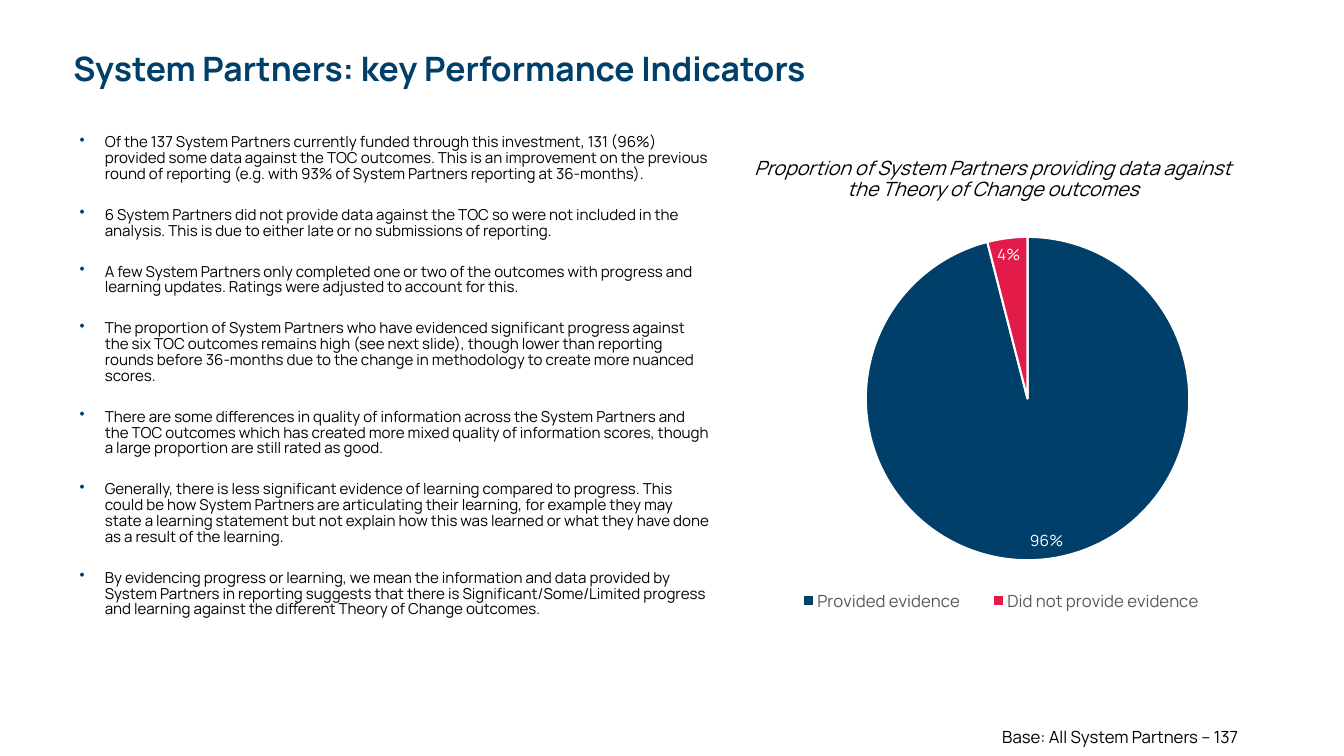
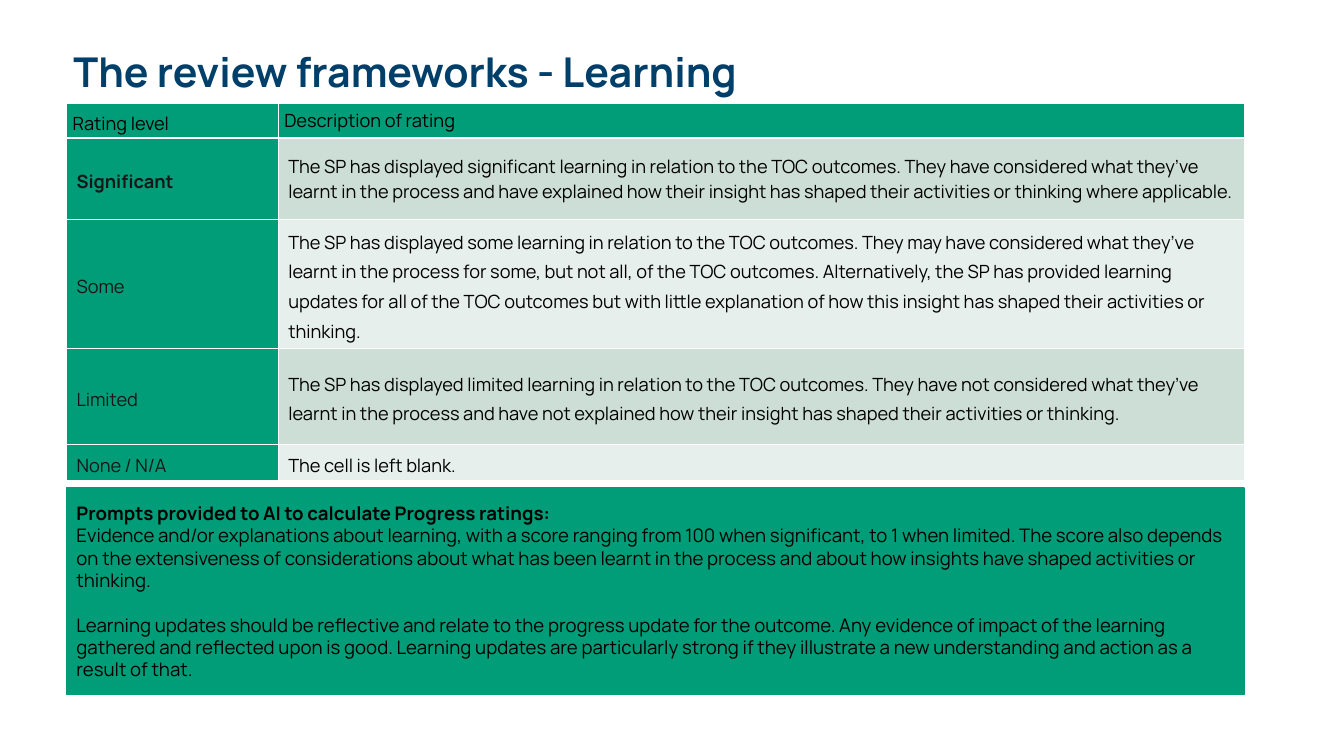
from dataclasses import dataclass, field
from typing import Any

import pptx
import pptx.chart.data
import pptx.dml.color
import pptx.enum.chart
import pptx.enum.shapes
import pptx.enum.text
import pptx.oxml.ns
import pptx.oxml.xmlchemy
import pptx.util

Inches = pptx.util.Inches
Pt = pptx.util.Pt
qn = pptx.oxml.ns.qn
new_element = pptx.oxml.xmlchemy.OxmlElement
Align = pptx.enum.text.PP_ALIGN
Anchor = pptx.enum.text.MSO_ANCHOR


@dataclass(frozen=True)
class TextStyle:
    size: float
    color: str = "000000"
    bold: bool = False
    italic: bool = False


@dataclass(frozen=True)
class Theme:
    font: str = "Manrope"
    navy: str = "003F69"
    red: str = "E31B49"
    green: str = "019C78"
    bands: tuple[str, str] = ("CCDED6", "E7EFEC")
    white: str = "FFFFFF"
    title_sizes: tuple[float, float] = (24, 29.3)
    bullet: TextStyle = TextStyle(10.8)
    chart_title: TextStyle = TextStyle(14, italic=True)
    chart_label: TextStyle = TextStyle(11, "FFFFFF")
    legend: TextStyle = TextStyle(12, "595959")
    footer: TextStyle = TextStyle(12)
    cell: TextStyle = TextStyle(13)
    rating: TextStyle = TextStyle(13, "181717")
    rating_bold: TextStyle = TextStyle(13, "181717", bold=True)
    prompt: TextStyle = TextStyle(13.3)
    prompt_bold: TextStyle = TextStyle(13.3, bold=True)


@dataclass(frozen=True)
class Line:
    """One paragraph with its style and paragraph format values."""
    text: str
    style: TextStyle
    layout: dict[str, Any] = field(default_factory=dict)
    bullet: bool = False


@dataclass(frozen=True)
class Area:
    left: float
    top: float
    width: float
    height: float

    def lengths(self) -> tuple[int, ...]:
        return tuple(Inches(v) for v in (self.left, self.top, self.width, self.height))


@dataclass(frozen=True)
class Rating:
    level: str
    description: str
    height: float
    style: TextStyle
    spacing: float = 1.2


THEME = Theme()
NO_INSETS = dict.fromkeys(("margin_left", "margin_top", "margin_right", "margin_bottom"), 0)

BULLETS = (
    "Of the 137 System Partners currently funded through this investment, 131 (96%) provided some data against the TOC outcomes. This is an improvement on the previous round of reporting (e.g. with 93% of System Partners reporting at 36-months).",
    "6 System Partners did not provide data against the TOC so were not included in the analysis. This is due to either late or no submissions of reporting.",
    "A few System Partners only completed one or two of the outcomes with progress and learning updates. Ratings were adjusted to account for this.",
    "The proportion of System Partners who have evidenced significant progress against the six TOC outcomes remains high (see next slide), though lower than reporting rounds before 36-months due to the change in methodology to create more nuanced scores.",
    "There are some differences in quality of information across the System Partners and the TOC outcomes which has created more mixed quality of information scores, though a large proportion are still rated as good.",
    "Generally, there is less significant evidence of learning compared to progress. This could be how System Partners are articulating their learning, for example they may state a learning statement but not explain how this was learned or what they have done as a result of the learning.",
    "By evidencing progress or learning, we mean the information and data provided by System Partners in reporting suggests that there is Significant/Some/Limited progress and learning against the different Theory of Change outcomes.",
)

RATINGS = (
    Rating("Significant", "The SP has displayed significant learning in relation to the TOC outcomes. They have considered what they’ve learnt in the process and have explained how their insight has shaped their activities or thinking where applicable.", 0.81, THEME.rating_bold, 1.0),
    Rating("Some", "The SP has displayed some learning in relation to the TOC outcomes. They may have considered what they’ve learnt in the process for some, but not all, of the TOC outcomes. Alternatively, the SP has provided learning updates for all of the TOC outcomes but with little explanation of how this insight has shaped their activities or thinking.", 1.28, THEME.rating),
    Rating("Limited", "The SP has displayed limited learning in relation to the TOC outcomes. They have not considered what they’ve learnt in the process and have not explained how their insight has shaped their activities or thinking.", 0.95, THEME.rating),
    Rating("None / N/A", "The cell is left blank.", 0.36, THEME.rating),
)

PROMPTS = (
    Line("Prompts provided to AI to calculate Progress ratings:", THEME.prompt_bold),
    Line("Evidence and/or explanations about learning, with a score ranging from 100 when significant, to 1 when limited. The score also depends on the extensiveness of considerations about what has been learnt in the process and about how insights have shaped activities or thinking.", THEME.prompt),
    Line("Learning updates should be reflective and relate to the progress update for the outcome. Any evidence of impact of the learning gathered and reflected upon is good. Learning updates are particularly strong if they illustrate a new understanding and action as a result of that.", THEME.prompt, {"space_before": Pt(16)}),
)


# Formatting helpers
def rgb(color: str) -> pptx.dml.color.RGBColor:
    return pptx.dml.color.RGBColor.from_string(color)


def set_values(target: Any, values: dict[str, Any]) -> None:
    for name, value in values.items():
        setattr(target, name, value)


def style_font(font: Any, style: TextStyle) -> None:
    set_values(font, {"name": THEME.font, "size": Pt(style.size),
                      "bold": style.bold, "italic": style.italic})
    font.color.rgb = rgb(style.color)


def fill_solid(target: Any, color: str) -> None:
    target.fill.solid()
    target.fill.fore_color.rgb = rgb(color)


def xml(tag: str, parent: Any, **attributes: str) -> Any:
    child = new_element(tag)
    for name, value in attributes.items():
        child.set(name, value)
    parent.append(child)
    return child


def add_bullet(para: Any) -> None:
    props = para._p.get_or_add_pPr()
    indent = Inches(0.25)
    props.set("marL", str(indent))
    props.set("indent", str(-indent))
    xml("a:srgbClr", xml("a:buClr", props), val=THEME.navy)
    xml("a:buChar", props, char="•")


def write_lines(frame: Any, lines: tuple[Line, ...]) -> None:
    for index, line in enumerate(lines):
        para = frame.add_paragraph() if index else frame.paragraphs[0]
        set_values(para, line.layout)
        if line.bullet:
            add_bullet(para)
        span = para.add_run()
        span.text = line.text
        style_font(span.font, line.style)


def add_text(page: Any, area: Area, *lines: Line, **frame_values: Any) -> None:
    box = page.shapes.add_textbox(*area.lengths())
    set_values(box.text_frame, {"word_wrap": True, **frame_values})
    write_lines(box.text_frame, lines)


def add_page(deck: Any, title: str, size: float) -> Any:
    page = deck.slides.add_slide(deck.slide_layouts[6])
    add_text(page, Area(0.63, 0.47, 10.85, 0.56),
             Line(title, TextStyle(size, THEME.navy, bold=True), {"line_spacing": 0.9}))
    return page


# Chart
def place_part(part: Any, index: int, **values: str) -> None:
    """Give a chart part a manual layout, as shares of the chart area."""
    for old in part.findall(qn("c:layout")):
        part.remove(old)
    layout = new_element("c:layout")
    manual = xml("c:manualLayout", layout)
    for name, value in values.items():
        xml(f"c:{name}", manual, val=value)
    part.insert(index, layout)


def add_evidence_pie(page: Any, area: Area) -> None:
    data = pptx.chart.data.CategoryChartData(number_format='0"%"')
    data.categories = ["Provided evidence", "Did not provide evidence"]
    data.add_series("Series 1", (96, 4))
    chart = page.shapes.add_chart(
        pptx.enum.chart.XL_CHART_TYPE.PIE, *area.lengths(), data).chart
    set_values(chart, {"has_title": False, "has_legend": True})
    style_font(chart.font, THEME.legend)

    set_values(chart.legend, {"position": pptx.enum.chart.XL_LEGEND_POSITION.BOTTOM,
                              "include_in_layout": False})
    style_font(chart.legend.font, THEME.legend)
    place_part(chart.element.find(".//" + qn("c:legend")), 1, xMode="edge", yMode="edge",
               x="0.09", y="0.89", w="0.85", h="0.07")
    place_part(chart.element.find(".//" + qn("c:plotArea")), 0, layoutTarget="inner",
               xMode="edge", yMode="edge", x="0.26", y="0.08", w="0.61", h="0.8")

    plot = chart.plots[0]
    plot.vary_by_categories = True
    for index, color in enumerate((THEME.navy, THEME.red)):
        slice_format = plot.series[0].points[index].format
        fill_solid(slice_format, color)
        slice_format.line.color.rgb = rgb(THEME.white)
        slice_format.line.width = Pt(1.5)
    labels = plot.series[0].data_labels
    set_values(labels, {"show_value": True, "show_percentage": False,
                        "number_format": '0"%"', "number_format_is_linked": False,
                        "position": pptx.enum.chart.XL_LABEL_POSITION.BEST_FIT})
    style_font(labels.font, THEME.chart_label)


# Table
def format_cell(cell: Any, line: Line, fill: str, inset: float) -> None:
    set_values(cell, {"vertical_anchor": Anchor.MIDDLE, "margin_left": Inches(inset),
                      "margin_right": Inches(inset), "margin_top": 0, "margin_bottom": 0})
    write_lines(cell.text_frame, (line,))
    props = cell._tc.get_or_add_tcPr()
    for side in ("L", "R", "T", "B"):
        border = xml(f"a:ln{side}", props, w=str(Pt(1)))
        xml("a:srgbClr", xml("a:solidFill", border), val=THEME.white)
    fill_solid(cell, fill)


def add_ratings_table(page: Any, area: Area) -> None:
    header = Rating("Rating level", "Description of rating", 0.34, THEME.cell, 1.0)
    rows = (header, *RATINGS)
    table = page.shapes.add_table(len(rows), 2, *area.lengths()).table
    set_values(table, {"first_row": False, "horz_banding": False})
    for column, width in zip(table.columns, (2.1, area.width - 2.1)):
        column.width = Inches(width)
    for index, rating in enumerate(rows):
        table.rows[index].height = Inches(rating.height)
        inset = 0.1 if index else 0.06
        fill = THEME.bands[(index - 1) % 2] if index else THEME.green
        level = Line(rating.level, rating.style, {"line_spacing": 1.2})
        description = Line(rating.description, THEME.cell, {"line_spacing": rating.spacing})
        format_cell(table.cell(index, 0), level, THEME.green, inset)
        format_cell(table.cell(index, 1), description, fill, inset)


def add_prompt_panel(page: Any, area: Area) -> None:
    panel = page.shapes.add_shape(
        pptx.enum.shapes.MSO_SHAPE.RECTANGLE, *area.lengths())
    panel.shadow.inherit = False
    fill_solid(panel, THEME.green)
    panel.line.color.rgb = rgb(THEME.green)
    panel.line.width = Pt(1)
    set_values(panel.text_frame, {"word_wrap": True, "vertical_anchor": Anchor.MIDDLE})
    write_lines(panel.text_frame, PROMPTS)
    for para in panel.text_frame.paragraphs:
        para.alignment = Align.LEFT


# Slides
def build_indicators(deck: Any) -> None:
    page = add_page(deck, "System Partners: key Performance Indicators", THEME.title_sizes[0])
    spacing = {"line_spacing": 0.87, "space_after": Pt(8)}
    add_text(page, Area(0.79, 1.34, 6.26, 5.85), *(
        Line(text, THEME.bullet, {**spacing, "space_before": Pt(10 if index else 0)}, True)
        for index, text in enumerate(BULLETS)), **NO_INSETS)
    add_text(page, Area(7.22, 1.52, 5.26, 0.53),
             Line("Proportion of System Partners providing data against the Theory of Change outcomes",
                  THEME.chart_title, {"alignment": Align.CENTER, "line_spacing": 0.9}))
    add_evidence_pie(page, Area(7.22, 1.79, 5.26, 4.51))
    add_text(page, Area(9.94, 7.19, 3.15, 0.21),
             Line("Base: All System Partners – 137", THEME.footer, {"line_spacing": 1.1}),
             **NO_INSETS)


def build_learning(deck: Any) -> None:
    page = add_page(deck, "The review frameworks - Learning", THEME.title_sizes[1])
    add_ratings_table(page, Area(0.66, 1.03, 11.68, 3.74))
    add_prompt_panel(page, Area(0.66, 4.84, 11.68, 2.05))


def main() -> None:
    deck = pptx.Presentation()
    set_values(deck, {"slide_width": Inches(13.33), "slide_height": Inches(7.5)})
    build_indicators(deck)
    build_learning(deck)
    deck.save("out.pptx")


if __name__ == "__main__":
    main()
